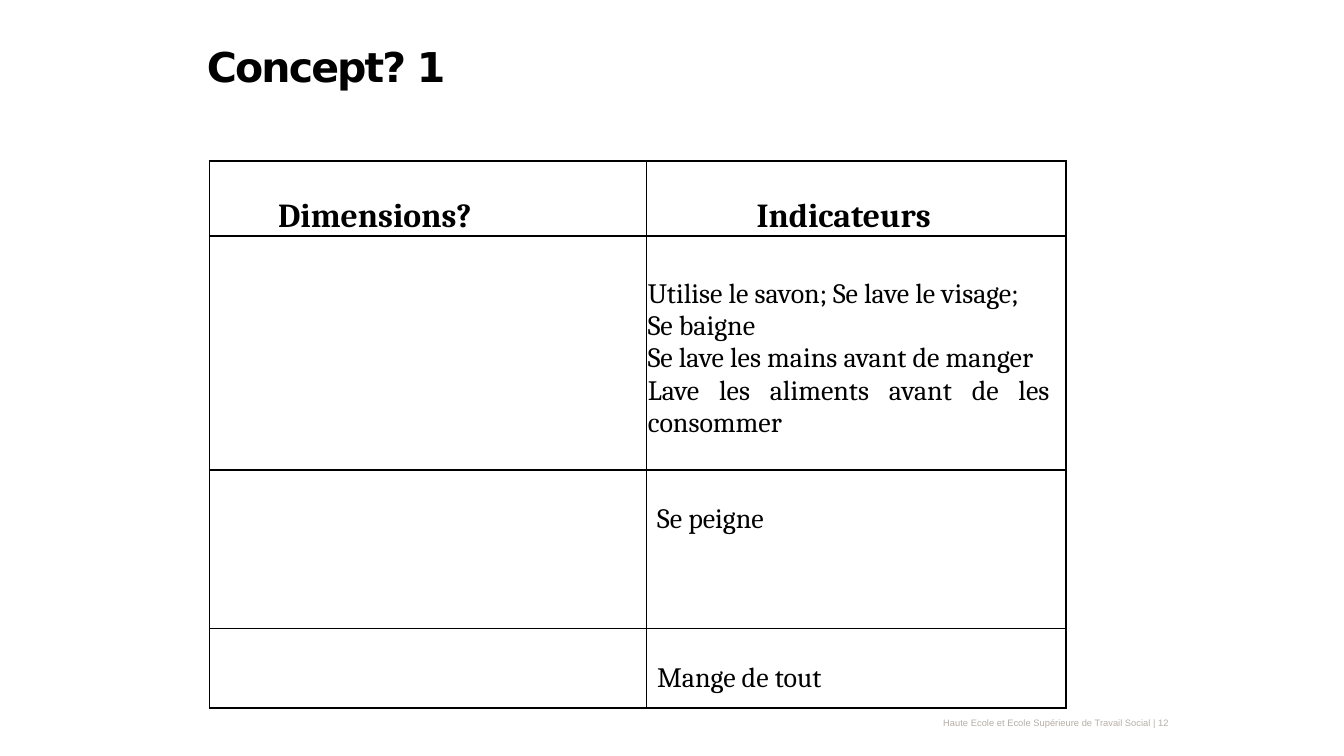
from lxml import etree
from pptx import Presentation
from pptx.dml.color import RGBColor
from pptx.enum.text import MSO_ANCHOR, PP_ALIGN
from pptx.oxml.ns import qn
from pptx.util import Inches, Pt

TOP, MID = MSO_ANCHOR.TOP, MSO_ANCHOR.MIDDLE
LEFT, RIGHT, FULL = PP_ALIGN.LEFT, PP_ALIGN.RIGHT, PP_ALIGN.JUSTIFY
W = 10
H = W * 9 / 16
HUES = {"ink": "000000", "foot": "B5AEA7"}
FONTS = {
    "title": {"name": "DejaVu Sans", "size": Pt(22), "bold": True},
    "head": {"name": "Cambria", "size": Pt(18), "bold": True},
    "body": {"name": "Cambria", "size": Pt(15), "bold": False},
    "foot": {"name": "Arial", "size": Pt(5), "bold": False},
}


def write(para, text, style, hue="ink", align=LEFT):
    run = para.add_run()
    run.text = text
    for key, val in FONTS[style].items():
        setattr(run.font, key, val)
    run.font.color.rgb = RGBColor.from_string(HUES[hue])
    para.alignment = align
    return run


def edge(cell):
    props = cell._tc.get_or_add_tcPr()
    for side in ("lnL", "lnR", "lnT", "lnB"):
        line = etree.SubElement(props, qn("a:" + side), w=str(Pt(1)))
        fill = etree.SubElement(line, qn("a:solidFill"))
        etree.SubElement(fill, qn("a:srgbClr"), val=HUES["ink"])
    cell.fill.background()


prs = Presentation()
prs.slide_width, prs.slide_height = Inches(W), Inches(H)
slide = prs.slides.add_slide(prs.slide_layouts[5])

title = slide.shapes.title
place = {"left": 0.144 * W, "top": 0.046 * H, "width": 0.462 * W, "height": 0.167 * H}
for key, val in place.items():
    setattr(title, key, Inches(val))
title.text_frame.vertical_anchor = TOP
run = write(title.text_frame.paragraphs[0], "Concept? 1", "title")
run._r.get_or_add_rPr().set("spc", "-100")

cols = [3.25, 3.12]
rows = [0.56, 1.74, 1.18, 0.59]
cells = {
    (0, 0): ("head", 0.51, 0.27, ["Dimensions?"]),
    (0, 1): ("head", 0.82, 0.27, ["Indicateurs"]),
    (1, 1): ("body", 0.01, 0.31, [
        "Utilise le savon; Se lave le visage; Se baigne",
        "Se lave les mains avant de manger",
        "Lave les aliments avant de les consommer",
    ]),
    (2, 1): ("body", 0.08, 0.25, ["Se peigne"]),
    (3, 1): ("body", 0.08, 0.25, ["Mange de tout"]),
}
frame = slide.shapes.add_table(
    len(rows), len(cols), Inches(0.156 * W), Inches(0.213 * H),
    Inches(sum(cols)), Inches(sum(rows)))
table = frame.table
table.first_row = table.horz_banding = False
for col, width in zip(table.columns, cols):
    col.width = Inches(width)
for row, height in zip(table.rows, rows):
    row.height = Inches(height)
for cell in table.iter_cells():
    edge(cell)

for (row, col), (style, left, top, lines) in cells.items():
    cell = table.cell(row, col)
    pads = {"left": left, "top": top, "right": 0.12, "bottom": 0}
    for side, val in pads.items():
        setattr(cell, "margin_" + side, Inches(val))
    cell.vertical_anchor = TOP
    for num, text in enumerate(lines):
        para = cell.text_frame.add_paragraph() if num else cell.text_frame.paragraphs[0]
        write(para, text, style, align=FULL if num == 2 else LEFT)

foot = slide.shapes.add_textbox(
    Inches(0.633 * W), Inches(0.946 * H), Inches(0.247 * W), Inches(0.018 * H))
box = foot.text_frame
for key, val in {"word_wrap": True, "vertical_anchor": MID, "margin_top": 0, "margin_bottom": 0}.items():
    setattr(box, key, val)
para = box.paragraphs[0]
para.line_spacing = Pt(7)
write(para, "Haute Ecole et Ecole Supérieure de Travail Social | 12", "foot", "foot", RIGHT)

prs.save("out.pptx")
